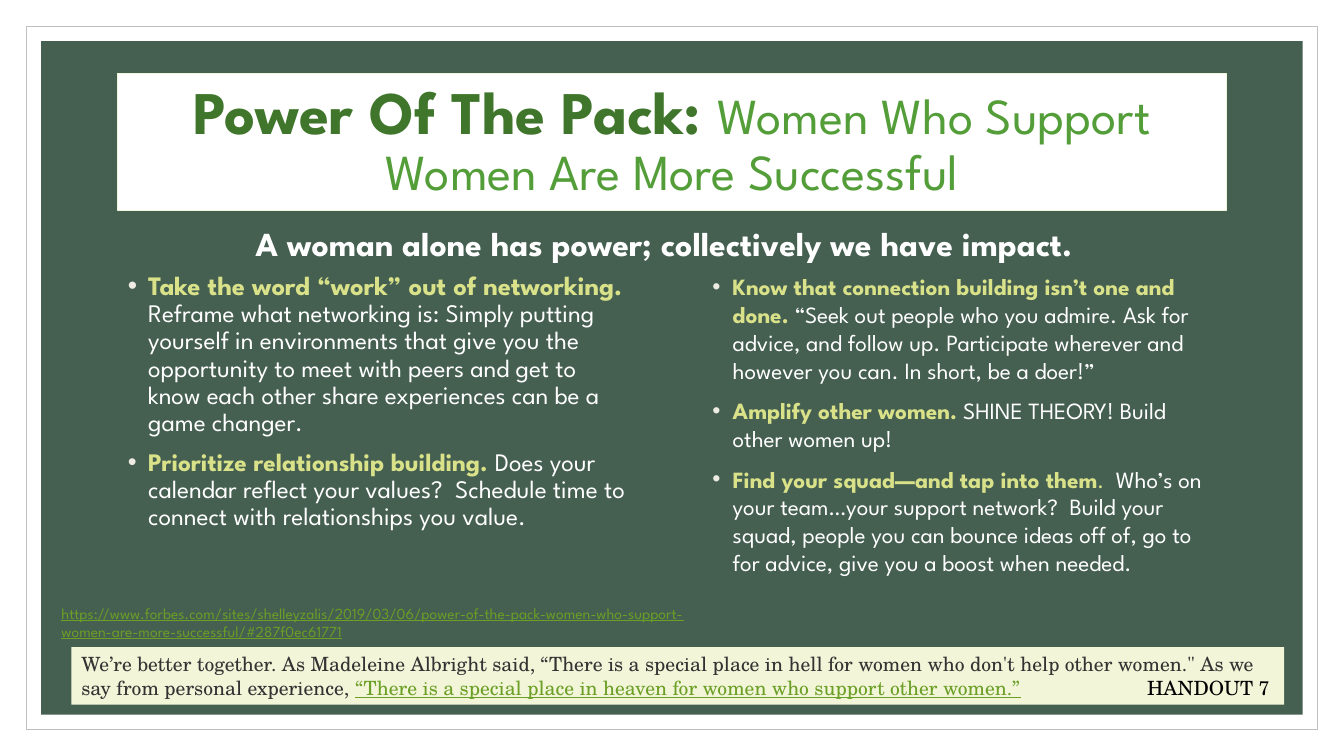
"""Build the Power Of The Pack handout slide."""
from lxml import etree
from pptx import Presentation
from pptx.dml.color import RGBColor
from pptx.enum.shapes import MSO_SHAPE
from pptx.enum.text import MSO_ANCHOR, MSO_AUTO_SIZE, PP_ALIGN
from pptx.oxml.ns import qn
from pptx.util import Cm, Pt

RECTANGLE = MSO_SHAPE.RECTANGLE
TOP, MIDDLE = MSO_ANCHOR.TOP, MSO_ANCHOR.MIDDLE
LEFT, CENTER = PP_ALIGN.LEFT, PP_ALIGN.CENTER
NO_AUTOFIT = MSO_AUTO_SIZE.NONE

COLORS = {
    "white": "FFFFFF", "frame": "BFBFBF", "panel": "455F51",
    "cream": "F2F5D8", "deep green": "3F762B", "green": "549E39",
    "lime": "D9E289", "bullet": "EEEBE3", "text": "333333",
    "link": "6B9F25", "black": "000000",
}
SPARTAN, SCHOLA = "League Spartan", "TeX Gyre Schola"
SLIDE_WIDTH, SLIDE_HEIGHT = 33.87, 19.05
INDENT = 0.51
HANDOUT_TAB = 29.95

# Each run: text, size, colour, style ("b" bold, "u" underlined)
TITLE = [[
    ("Power Of The Pack: ", 43.2, "deep green", "b"),
    ("Women Who Support Women Are More Successful", 36, "green", ""),
]]
MOTTO = [[("A woman alone has power; collectively we have impact.", 24, "white", "b")]]
NETWORKING = [
    [("Take the word “work” out of networking. ", 19, "lime", "b"),
     ("Reframe what networking is: Simply putting yourself in environments that "
      "give you the opportunity to meet with peers and get to know each other "
      "share experiences can be a game changer.", 18, "white", "")],
    [("Prioritize relationship building. ", 18, "lime", "b"),
     ("Does your calendar reflect your values?  Schedule time to connect with "
      "relationships you value.", 18, "white", "")],
]
CONNECTION = [
    [("Know that connection building isn’t one and done.", 16.6, "lime", "b"),
     (" “Seek out people who you admire. Ask for advice, and follow up. Participate "
      "wherever and however you can. In short, be a doer!”", 16.6, "white", "")],
    [("Amplify other women. ", 16.6, "lime", "b"),
     ("SHINE THEORY! Build other women up!", 16.6, "white", "")],
    [("Find your squad—and tap into them", 16.6, "lime", "b"),
     (".  ", 16.6, "lime", ""),
     ("Who’s on your team…your support network?  Build your squad, people you can "
      "bounce ideas off of, go to for advice, give you a boost when needed.",
      16.6, "white", "")],
]
QUOTE = [[
    ("We’re better together. As Madeleine Albright said, “There is a special place "
     "in hell for women who don't help other women.\" As we say from personal "
     "experience, ", 14, "text", ""),
    ("“There is a special place in heaven for women who support other women.”",
     14, "link", "u"),
    ("\tHANDOUT 7", 14, "black", ""),
]]
ADDRESS = [[
    ("https://www.forbes.com/sites/shelleyzalis/2019/03/06/power-of-the-pack-women-"
     "who-support-women-are-more-successful/#287f0ec61771", 11, "link", "u"),
]]
FRAMES = [(0.66, "white", "frame"), (1.04, "panel", None)]


def rgb(name):
    return RGBColor.from_string(COLORS[name])


def place(shape, left, top, width, height):
    shape.left, shape.top = Cm(left), Cm(top)
    shape.width, shape.height = Cm(width), Cm(height)


def paint(shape, fill, line=None, weight=0.5):
    shape.fill.solid()
    shape.fill.fore_color.rgb = rgb(fill)
    if line:
        shape.line.color.rgb = rgb(line)
        shape.line.width = Pt(weight)
    else:
        shape.line.fill.background()


def add_bullet(paragraph):
    properties = paragraph._p.get_or_add_pPr()
    properties.set("marL", str(Cm(INDENT)))
    properties.set("indent", str(-Cm(INDENT)))
    color = etree.SubElement(properties, qn("a:buClr"))
    etree.SubElement(color, qn("a:srgbClr"), val=COLORS["bullet"])
    etree.SubElement(properties, qn("a:buChar"), char="•")


def add_tab(paragraph, position):
    tabs = etree.SubElement(paragraph._p.get_or_add_pPr(), qn("a:tabLst"))
    etree.SubElement(tabs, qn("a:tab"), pos=str(Cm(position)), algn="r")


def write(shape, content, font=SPARTAN, align=LEFT, anchor=TOP, spacing=1.0,
          bullets=False, tab=None):
    frame = shape.text_frame
    frame.word_wrap = True
    frame.auto_size = NO_AUTOFIT
    frame.vertical_anchor = anchor
    for index, runs in enumerate(content):
        paragraph = frame.add_paragraph() if index else frame.paragraphs[0]
        if bullets:
            add_bullet(paragraph)
        if tab:
            add_tab(paragraph, tab)
        paragraph.alignment = align
        paragraph.line_spacing = spacing
        paragraph.space_before = Pt(9 if index else 0)
        for text, size, color, style in runs:
            run = paragraph.add_run()
            run.text = text
            run.font.name = font
            run.font.size = Pt(size)
            run.font.color.rgb = rgb(color)
            run.font.bold = "b" in style
            run.font.underline = "u" in style


def main():
    deck = Presentation()
    deck.slide_width, deck.slide_height = Cm(SLIDE_WIDTH), Cm(SLIDE_HEIGHT)
    slide = deck.slides.add_slide(deck.slide_layouts[4])
    title, motto, networking, spare, connection = slide.placeholders
    tree = title._element.getparent()
    tree.remove(spare._element)

    for order, (margin, fill, line) in enumerate(FRAMES):
        frame = slide.shapes.add_shape(
            RECTANGLE, Cm(margin), Cm(margin),
            Cm(SLIDE_WIDTH - 2 * margin), Cm(SLIDE_HEIGHT - 2 * margin))
        frame.shadow.inherit = False
        paint(frame, fill, line)
        tree.insert(2 + order, frame._element)

    place(title, 2.97, 1.85, 27.94, 3.45)
    paint(title, "white", "cream", 0.75)
    write(title, TITLE, align=CENTER, anchor=MIDDLE, spacing=0.9)

    place(motto, 2.97, 5.31, 27.53, 1.63)
    write(motto, MOTTO, align=CENTER, anchor=MIDDLE)

    place(networking, 2.97, 6.73, 13.21, 8.94)
    write(networking, NETWORKING, spacing=0.9, bullets=True)

    place(connection, 17.7, 6.73, 13.21, 9.58)
    write(connection, CONNECTION, bullets=True)

    quote = slide.shapes.add_shape(RECTANGLE, Cm(1.8), Cm(16.31), Cm(30.56), Cm(1.45))
    quote.shadow.inherit = False
    paint(quote, "cream")
    write(quote, QUOTE, font=SCHOLA, tab=HANDOUT_TAB)

    address = slide.shapes.add_textbox(Cm(1.3), Cm(15.09), Cm(16.94), Cm(1.19))
    write(address, ADDRESS)

    deck.save("out.pptx")


if __name__ == "__main__":
    main()
